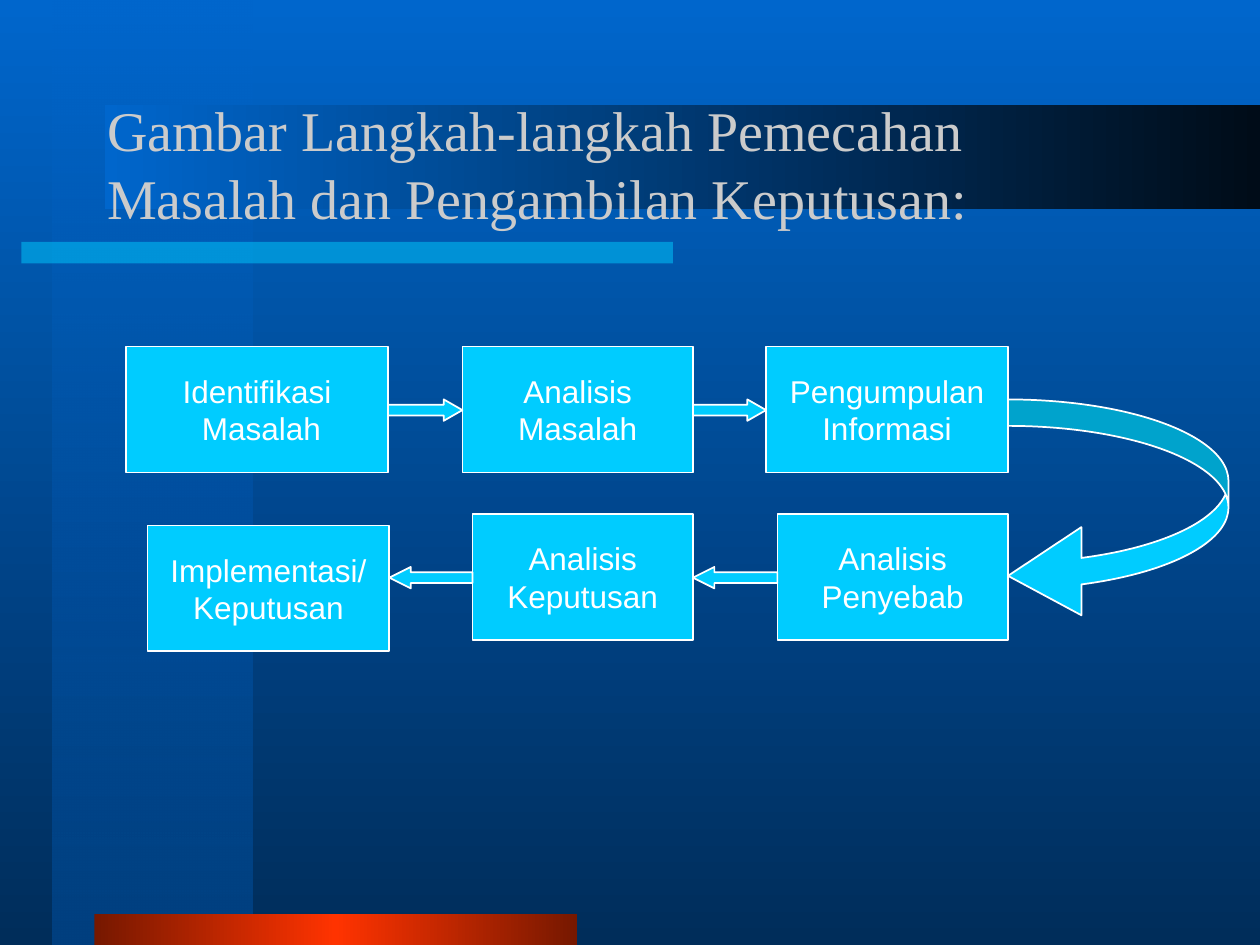
from dataclasses import dataclass

from lxml.etree import SubElement
from pptx import Presentation
from pptx.dml.color import RGBColor
from pptx.enum.shapes import MSO_SHAPE as Shape
from pptx.enum.text import MSO_ANCHOR as Anchor, MSO_AUTO_SIZE as AutoSize, PP_ALIGN as Align
from pptx.oxml.ns import qn
from pptx.util import Inches, Pt


@dataclass(frozen=True)
class Theme:
    blue: str = "0066CC"
    page_end: str = "002D5A"
    panel_end: str = "004080"
    band_end: str = "000C18"
    cyan: str = "00CCFF"
    red: str = "FF3300"
    red_edge: str = "761800"
    white: str = "FFFFFF"
    title_color: str = "CBCBCB"
    title_font: str = "Times New Roman"
    body_font: str = "Arial"
    title_size: int = 32
    body_size: int = 18
    line_width: int = 1


class FlowSlide:
    """Holds the theme and the current slide."""

    def __init__(self, page, theme):
        self.page = page
        self.theme = theme

    def gradient(self, fill, element, stops, angle):
        """Fill with (percent, colour, opacity) stops; angle runs counter-clockwise."""
        fill.gradient()
        fill.gradient_angle = angle
        stop_list = next(element.iter(qn("a:gsLst")))
        for old_stop in list(stop_list):
            stop_list.remove(old_stop)
        for percent, color, opacity in stops:
            stop = SubElement(stop_list, qn("a:gs"), pos=str(percent * 1000))
            self.opacity(SubElement(stop, qn("a:srgbClr"), val=color), opacity)

    def opacity(self, color, percent):
        if percent < 100:
            SubElement(color, qn("a:alpha"), val=str(percent * 1000))

    def background(self, stops):
        self.gradient(self.page.background.fill, self.page._element, stops, 270)

    def shape(self, kind, left, top, width, height):
        shape = self.page.shapes.add_shape(
            kind, Inches(left), Inches(top), Inches(width), Inches(height))
        shape.shadow.inherit = False
        return shape

    def gradient_bar(self, area, stops, angle):
        bar = self.shape(Shape.RECTANGLE, *area)
        bar.line.fill.background()
        self.gradient(bar.fill, bar._element, stops, angle)

    def accent_bar(self, area, color, percent):
        bar = self.shape(Shape.RECTANGLE, *area)
        bar.line.fill.background()
        bar.fill.solid()
        bar.fill.fore_color.rgb = RGBColor.from_string(color)
        self.opacity(next(bar._element.spPr.iter(qn("a:srgbClr"))), percent)

    def set_font(self, para, name, size, color):
        para.font.name = name
        para.font.size = Pt(size)
        para.font.color.rgb = RGBColor.from_string(color)

    def title(self, text, left, top, width, height):
        title = self.page.shapes.title
        title.left, title.top = Inches(left), Inches(top)
        title.width, title.height = Inches(width), Inches(height)
        frame = title.text_frame
        frame.text = text
        frame.word_wrap = True
        frame.auto_size = AutoSize.NONE
        frame.vertical_anchor = Anchor.MIDDLE
        para = frame.paragraphs[0]
        para.alignment = Align.LEFT
        theme = self.theme
        self.set_font(para, theme.title_font, theme.title_size, theme.title_color)
        # Bring the title in front of the bars
        self.page.shapes._spTree.append(title._element)

    def outlined(self, kind, left, top, width, height, adjustments=()):
        shape = self.shape(kind, left, top, width, height)
        shape.fill.solid()
        shape.fill.fore_color.rgb = RGBColor.from_string(self.theme.cyan)
        shape.line.color.rgb = RGBColor.from_string(self.theme.white)
        shape.line.width = Pt(self.theme.line_width)
        for index, value in enumerate(adjustments):
            shape.adjustments[index] = value
        return shape

    def step(self, lines, left, top, width, height=1):
        box = self.outlined(Shape.RECTANGLE, left, top, width, height)
        frame = box.text_frame
        frame.word_wrap = False
        frame.vertical_anchor = Anchor.MIDDLE
        for index, line in enumerate(lines):
            para = frame.add_paragraph() if index else frame.paragraphs[0]
            para.text = line
            para.alignment = Align.CENTER
            self.set_font(para, self.theme.body_font, self.theme.body_size, self.theme.white)

    def step_row(self, steps, arrow_kind, arrow_top, head):
        """Draw steps from left to right, with an arrow filling each gap."""
        for lines, left, top, width in steps:
            self.step(lines, left, top, width)
        for (_, left, _, width), (_, next_left, _, _) in zip(steps, steps[1:]):
            start = left + width
            self.outlined(arrow_kind, start, arrow_top, next_left - start, 0.17, (0.5, head))


def main():
    theme = Theme()
    deck = Presentation()
    deck.slide_width, deck.slide_height = Inches(10), Inches(7.5)
    page = deck.slides.add_slide(deck.slide_layouts[5])
    slide = FlowSlide(page, theme)

    # Background and decorative bars
    slide.background([(0, theme.blue, 100), (100, theme.page_end, 100)])
    slide.gradient_bar((0.42, 0, 1.58, 7.5),
                       [(0, theme.blue, 50), (100, theme.panel_end, 100)], 270)
    slide.accent_bar((0.17, 1.92, 5.17, 0.17), theme.cyan, 50)
    slide.gradient_bar((0.75, 7.25, 3.83, 0.25),
                       [(0, theme.red_edge, 100), (50, theme.red, 100),
                        (100, theme.red_edge, 100)], 0)
    slide.gradient_bar((0.83, 0.83, 9.17, 0.83),
                       [(0, theme.blue, 100), (100, theme.band_end, 100)], 0)

    # Title
    slide.title("Gambar Langkah-langkah Pemecahan Masalah dan Pengambilan Keputusan:",
                0.75, 0.67, 8.5, 1.25)

    # Upper row runs to the right
    slide.step_row([
        (("Identifikasi", " Masalah"), 1, 2.75, 2.08),
        (("Analisis", "Masalah"), 3.67, 2.75, 1.83),
        (("Pengumpulan", "Informasi"), 6.08, 2.75, 1.92),
    ], Shape.RIGHT_ARROW, 3.17, 0.875)

    # Turn into the lower row
    slide.outlined(Shape.CURVED_LEFT_ARROW, 8, 3.17, 1.75, 1.75, (0.12, 0.4, 0.333))

    # Lower row runs back to the left
    slide.step_row([
        (("Implementasi/", "Keputusan"), 1.17, 4.17, 1.92),
        (("Analisis", "Keputusan"), 3.75, 4.08, 1.75),
        (("Analisis", "Penyebab"), 6.17, 4.08, 1.83),
    ], Shape.LEFT_ARROW, 4.5, 1)

    deck.save("out.pptx")


if __name__ == "__main__":
    main()
